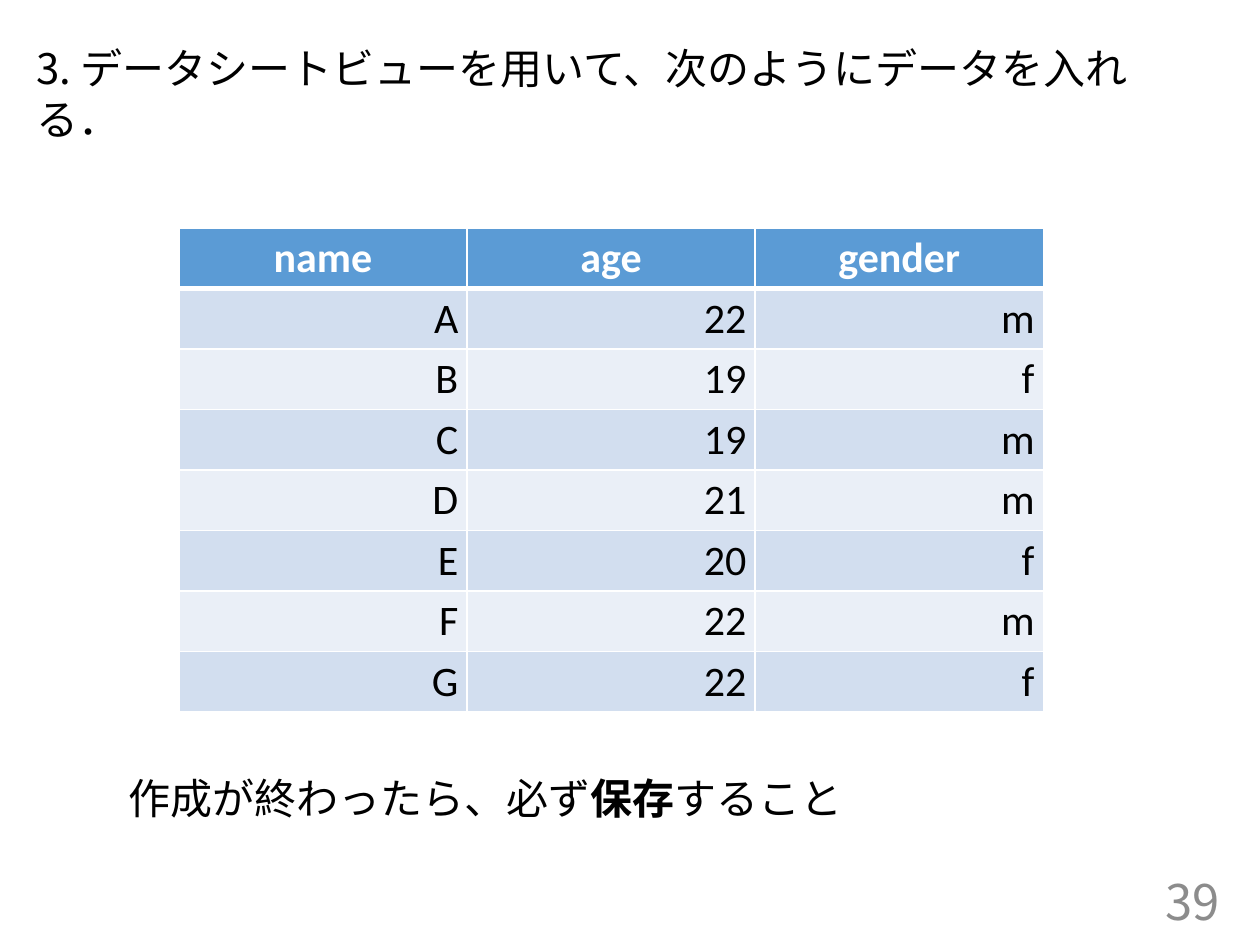
from lxml import etree
from pptx import Presentation
from pptx.dml.color import RGBColor
from pptx.enum.text import MSO_ANCHOR, MSO_AUTO_SIZE, PP_ALIGN
from pptx.oxml.ns import qn
from pptx.util import Inches, Pt

BLACK = RGBColor(0x00, 0x00, 0x00)
WHITE = RGBColor(0xFF, 0xFF, 0xFF)
GRAY = RGBColor(0x8C, 0x8C, 0x8C)
HEADER_BLUE = RGBColor(0x5B, 0x9B, 0xD5)
BAND_DARK = RGBColor(0xD2, 0xDE, 0xEF)
BAND_LIGHT = RGBColor(0xEA, 0xEF, 0xF7)
JAPANESE = "Noto Sans CJK JP"
LATIN = "Calibri"


def add_run(paragraph, text, font=LATIN, size=24, color=BLACK, bold=False):
    run = paragraph.add_run()
    run.text = text
    run.font.name = font
    run.font.size = Pt(size)
    run.font.bold = bold
    run.font.color.rgb = color
    etree.SubElement(run.font._element, qn("a:ea"), typeface=JAPANESE)


def set_border(cell, side, width):
    properties = cell._tc.get_or_add_tcPr()
    line = etree.SubElement(properties, qn(f"a:{side}"), w=str(Pt(width)))
    fill = etree.SubElement(line, qn("a:solidFill"))
    etree.SubElement(fill, qn("a:srgbClr"), val=str(WHITE))


prs = Presentation()
prs.slide_width = Inches(10)
prs.slide_height = Inches(7.5)
slide = prs.slides.add_slide(prs.slide_layouts[5])

instruction = slide.shapes.title
instruction.left, instruction.top = Inches(0.19), Inches(0.29)
instruction.width, instruction.height = Inches(9.17), Inches(1.51)
instruction.text_frame.auto_size = MSO_AUTO_SIZE.NONE
instruction.text_frame.vertical_anchor = MSO_ANCHOR.TOP
instruction_line = instruction.text_frame.paragraphs[0]
instruction_line.alignment = PP_ALIGN.LEFT
instruction_line.line_spacing = 1.0
add_run(instruction_line, "3. データシートビューを用いて、次のようにデータを入れる．", JAPANESE)

page_number = slide.shapes.add_textbox(Inches(7.53), Inches(6.95), Inches(2.25), Inches(0.4))
page_number.text_frame.word_wrap = True
page_number.text_frame.vertical_anchor = MSO_ANCHOR.MIDDLE
page_line = page_number.text_frame.paragraphs[0]
page_line.alignment = PP_ALIGN.RIGHT
add_run(page_line, "39", JAPANESE, 28, GRAY)

records = [
    ("name", "age", "gender"),
    ("A", "22", "m"),
    ("B", "19", "f"),
    ("C", "19", "m"),
    ("D", "21", "m"),
    ("E", "20", "f"),
    ("F", "22", "m"),
    ("G", "22", "f"),
]
people = slide.shapes.add_table(
    len(records), 3, Inches(1.42), Inches(1.81), Inches(6.86), Inches(3.85)
).table
for row in people.rows:
    row.height = Inches(0.48)

for r, record in enumerate(records):
    header = r == 0
    for c, value in enumerate(record):
        cell = people.cell(r, c)
        cell.margin_left = cell.margin_right = Inches(0.07)
        cell.margin_top = cell.margin_bottom = Inches(0.04)
        for side in ("lnL", "lnR", "lnT", "lnB"):
            thick = (header and side == "lnB") or (r == 1 and side == "lnT")
            set_border(cell, side, 3 if thick else 1)
        cell.fill.solid()
        cell.fill.fore_color.rgb = HEADER_BLUE if header else (BAND_LIGHT, BAND_DARK)[r % 2]
        entry = cell.text_frame.paragraphs[0]
        entry.alignment = PP_ALIGN.CENTER if header else PP_ALIGN.RIGHT
        add_run(entry, value, color=WHITE if header else BLACK, bold=header)

reminder = slide.shapes.add_textbox(Inches(0.92), Inches(6.08), Inches(5.92), Inches(0.5))
reminder.text_frame.word_wrap = False
reminder.text_frame.auto_size = MSO_AUTO_SIZE.SHAPE_TO_FIT_TEXT
reminder_line = reminder.text_frame.paragraphs[0]
add_run(reminder_line, "作成が終わったら、必ず")
add_run(reminder_line, "保存", bold=True)
add_run(reminder_line, "すること")

prs.save("out.pptx")
